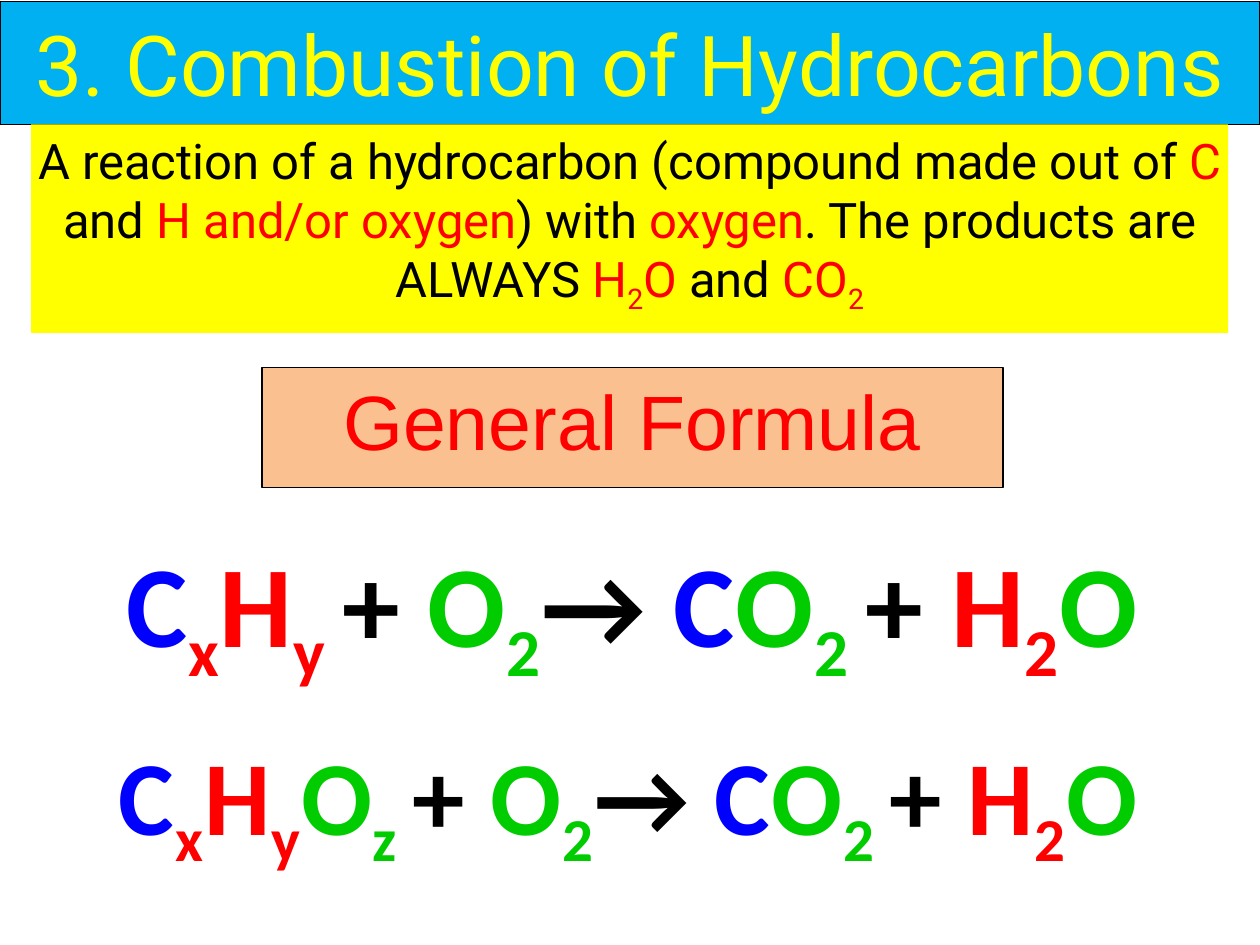
"""Build the slide on the combustion of hydrocarbons."""
import pptx
import pptx.dml.color
import pptx.enum.shapes
import pptx.enum.text
import pptx.util

COLOURS = {
    "sky": "00B0F0", "yellow": "FFFF00", "peach": "FAC090",
    "black": "000000", "red": "FF0000", "blue": "0000FF", "green": "00CC00",
}
SUB = -25000

HEADING = [("3. Combustion of Hydrocarbons", "yellow", 0)]
DEFINITION = [
    ("A reaction of a hydrocarbon (compound made out of ", "black", 0),
    ("C", "red", 0), (" and ", "black", 0),
    ("H and/or oxygen", "red", 0), (") with ", "black", 0),
    ("oxygen", "red", 0), (". The products are ALWAYS ", "black", 0),
    ("H", "red", 0), ("2", "red", SUB), ("O", "red", 0),
    (" and ", "black", 0), ("CO", "red", 0), ("2", "red", SUB),
]
SUBHEADING = [("General Formula", "red", 0)]
CARBON_HYDROGEN = [("C", "blue", 0), ("x", "red", SUB), ("H", "red", 0)]
COMBUSTION = [
    ("+ ", "black", 0), ("O", "green", 0), ("2", "green", SUB),
    ("→ ", "black", 0),
    ("C", "blue", 0), ("O", "green", 0), ("2 ", "green", SUB),
    ("+ ", "black", 0),
    ("H", "red", 0), ("2", "red", SUB), ("O", "green", 0),
]
HYDROCARBON = CARBON_HYDROGEN + [("y ", "red", SUB)] + COMBUSTION
OXYGENATED = CARBON_HYDROGEN + [
    ("y", "red", SUB), ("O", "green", 0), ("z ", "green", SUB),
] + COMBUSTION

PANEL = {"margins": (0, 0.13, 0, 0)}
FORMULA = {"font": "Calibri", "bold": True, "spacing": 50}
PARTS = [
    (HEADING, (0, 0.03, 25.4, 2.48),
     {"size": 48, "fill": "sky", "outline": "black", "anchor": "MIDDLE"}),
    (DEFINITION, (0.63, 2.51, 24.13, 4.2), {"size": 28, "fill": "yellow", **PANEL}),
    (SUBHEADING, (5.28, 7.41, 14.94, 2.42),
     {"size": 44, "font": "Arial", "fill": "peach", "outline": "black", **PANEL}),
    (OXYGENATED, (-0.08, 14.6, 25.48, 2.82), {"size": 60, **FORMULA}),
    (HYDROCARBON, (0, 10.59, 25.48, 3.07), {"size": 66, **FORMULA}),
]


def rgb(name):
    return pptx.dml.color.RGBColor.from_string(COLOURS[name])


def add_text(slide, pieces, place, *, size, font="Roboto", bold=False, spacing=0,
             fill=None, outline=None, anchor="TOP", margins=(0.25, 0.13, 0.25, 0.13)):
    box = [pptx.util.Cm(length) for length in place]
    if fill:
        holder = slide.shapes.add_shape(pptx.enum.shapes.MSO_SHAPE.RECTANGLE, *box)
        holder.shadow.inherit = False
        holder.fill.solid()
        holder.fill.fore_color.rgb = rgb(fill)
        if outline:
            holder.line.color.rgb = rgb(outline)
            holder.line.width = pptx.util.Pt(0.75)
        else:
            holder.line.fill.background()
    else:
        holder = slide.shapes.add_textbox(*box)
    frame = holder.text_frame
    frame.word_wrap = True
    frame.vertical_anchor = pptx.enum.text.MSO_ANCHOR[anchor]
    for side, margin in zip(("left", "top", "right", "bottom"), margins):
        setattr(frame, f"margin_{side}", pptx.util.Cm(margin))
    paragraph = frame.paragraphs[0]
    paragraph.alignment = pptx.enum.text.PP_ALIGN.CENTER
    for text, colour, baseline in pieces:
        run = paragraph.add_run()
        run.text = text
        run.font.name = font
        run.font.size = pptx.util.Pt(size)
        run.font.bold = bold
        run.font.color.rgb = rgb(colour)
        properties = run._r.get_or_add_rPr()
        if baseline:
            properties.set("baseline", str(baseline))
        if spacing:
            properties.set("spc", str(spacing))


def main():
    deck = pptx.Presentation()
    deck.slide_width = pptx.util.Cm(25.4)
    deck.slide_height = pptx.util.Cm(19.05)
    slide = deck.slides.add_slide(deck.slide_layouts[6])
    for pieces, place, style in PARTS:
        add_text(slide, pieces, place, **style)
    deck.save("out.pptx")


if __name__ == "__main__":
    main()
